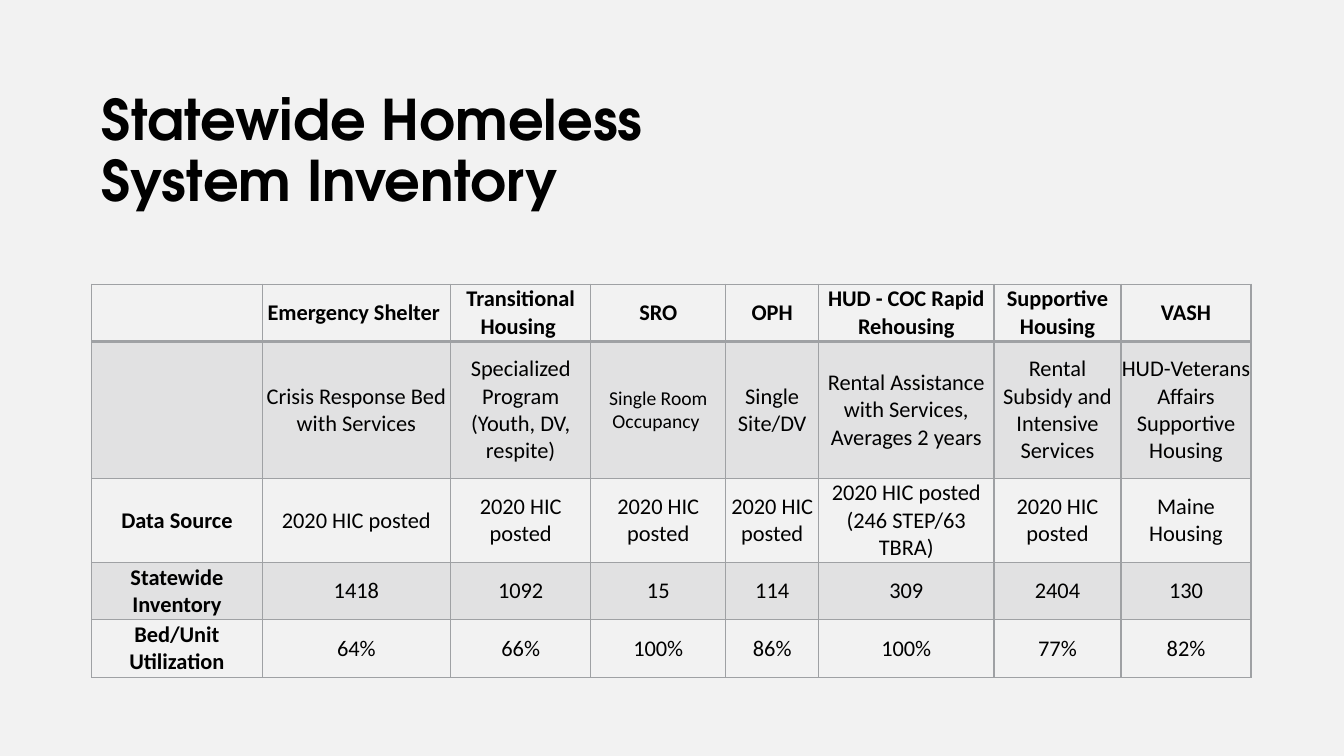
from lxml.etree import SubElement as Sub
from pptx import Presentation
from pptx.dml.color import RGBColor as RGB
from pptx.enum.text import MSO_ANCHOR as Anchor, PP_ALIGN as Align
from pptx.oxml.ns import qn
from pptx.util import Inches, Pt

PAPER = RGB(0xF2, 0xF2, 0xF2)
GRAY = RGB(0x9F, 0xA1, 0xA4)
BLACK = RGB(0, 0, 0)

COLS = [1.69, 1.87, 1.39, 1.34, 0.92, 1.74, 1.26, 1.29]
HEIGHTS = [0.57, 1.36, 0.83, 0.57, 0.57]
HIC = "2020 HIC posted"
ROWS = [
    ["", "Emergency Shelter ", "Transitional Housing ", "SRO", "OPH",
     "HUD - COC Rapid Rehousing", "Supportive Housing", "VASH"],
    ["", "Crisis Response Bed with Services",
     "Specialized Program (Youth, DV, respite)", "Single Room Occupancy ",
     "Single Site/DV", "Rental Assistance with Services, Averages 2 years",
     "Rental Subsidy and Intensive Services",
     "HUD-Veterans Affairs Supportive Housing"],
    ["Data Source", HIC, HIC, HIC, HIC, HIC + " (246 STEP/63 TBRA)", HIC,
     "Maine Housing"],
    ["Statewide Inventory", "1418", "1092", "15", "114", "309", "2404", "130"],
    ["Bed/Unit Utilization", "64%", "66%", "100%", "86%", "100%", "77%", "82%"],
]
SMALL = (1, 3)

CELL = dict(margin_left=0, margin_right=0, margin_top=0, margin_bottom=0,
            vertical_anchor=Anchor.MIDDLE)
PLAIN = dict(first_row=False, horz_banding=False)
HEAD = dict(name="TeX Gyre Adventor", size=Pt(40), bold=True)
BODY = dict(name="Calibri", size=Pt(16))


def apply(item, form):
    """Set each attribute named in a format dict."""
    for key, value in form.items():
        setattr(item, key, value)


def style(para, form):
    """Format the font of a paragraph in black."""
    apply(para.font, form)
    para.font.color.rgb = BLACK


def border(cell, widths):
    """Draw the four sides of a cell with widths in points."""
    props = cell._tc.get_or_add_tcPr()
    for side, width in widths.items():
        line = Sub(props, qn("a:ln" + side), w=str(Pt(width)))
        Sub(Sub(line, qn("a:solidFill")), qn("a:srgbClr"), val=str(GRAY))


def shade(cell, band):
    """Fill a cell with faint gray if banded, else leave it clear."""
    if not band:
        cell.fill.background()
        return
    cell.fill.solid()
    cell.fill.fore_color.rgb = GRAY
    tint = cell._tc.tcPr.find(qn("a:solidFill")).find(qn("a:srgbClr"))
    Sub(tint, qn("a:alpha"), val="20000")


def title(slide, box, text):
    """Place the slide title in the box."""
    frame = slide.shapes.add_textbox(*map(Inches, box)).text_frame
    apply(frame, dict(word_wrap=True, vertical_anchor=Anchor.MIDDLE))
    para = frame.paragraphs[0]
    para.text = text
    para.line_spacing = 0.9
    style(para, HEAD)


def grid(slide, box):
    """Place the inventory table in the box."""
    table = slide.shapes.add_table(len(ROWS), len(COLS),
                                   *map(Inches, box)).table
    apply(table, PLAIN)
    for col, width in zip(table.columns, COLS):
        col.width = Inches(width)
    for r, (row, high) in enumerate(zip(ROWS, HEIGHTS)):
        table.rows[r].height = Inches(high)
        for c, text in enumerate(row):
            cell = table.cell(r, c)
            apply(cell, CELL)
            border(cell, dict(L=1, R=1, T=2 if r == 1 else 1,
                              B=2 if r == 0 else 1))
            shade(cell, r % 2 == 1)
            cell.text = text
            para = cell.text_frame.paragraphs[0]
            para.alignment = Align.CENTER
            size = Pt(14) if (r, c) == SMALL else Pt(16)
            style(para, BODY | dict(size=size, bold=r == 0 or c == 0))


def main():
    """Build and save the inventory slide."""
    deck = Presentation()
    apply(deck, dict(slide_width=Inches(13.33), slide_height=Inches(7.5)))
    slide = deck.slides.add_slide(deck.slide_layouts[6])
    back = slide.background.fill
    back.solid()
    back.fore_color.rgb = PAPER
    title(slide, (0.91, 0.6, 5.65, 1.83),
          "Statewide Homeless System Inventory")
    grid(slide, (0.91, 2.82, sum(COLS), sum(HEIGHTS)))
    deck.save("out.pptx")


if __name__ == "__main__":
    main()
